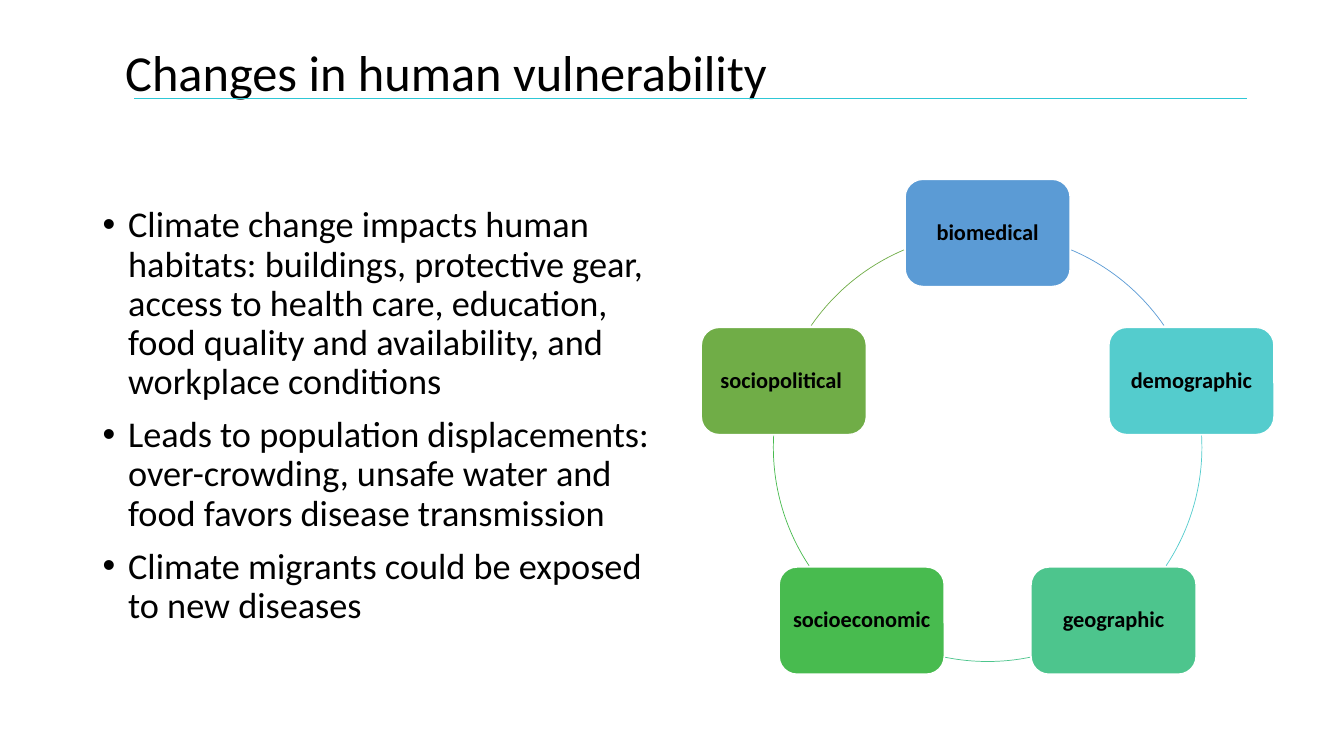
from math import cos, radians, sin

from lxml.etree import SubElement
from pptx import Presentation
from pptx.dml.color import RGBColor
from pptx.enum.shapes import MSO_CONNECTOR, MSO_SHAPE
from pptx.enum.text import MSO_ANCHOR, PP_ALIGN
from pptx.oxml.ns import qn
from pptx.util import Cm, Pt

COLORS = {
    "text": "000000",
    "border": "FFFFFF",
    "rule": "2EC7D6",
    "biomedical": "5B9BD5",
    "demographic": "54CCCD",
    "geographic": "4DC58D",
    "socioeconomic": "48BB4F",
    "sociopolitical ": "70AD47",
}
BULLETS = [
    "Climate change impacts human habitats: buildings, protective gear, access to "
    "health care, education, food quality and availability, and workplace conditions",
    "Leads to population displacements: over-crowding, unsafe water and food favors "
    "disease transmission",
    "Climate migrants could be exposed to new diseases",
]
FACTORS = [
    ("biomedical", 293, 325.4),
    ("demographic", 356.9, 33.6),
    ("geographic", 78.6, 101.4),
    ("socioeconomic", 146.4, 183.1),
    ("sociopolitical ", 214.6, 247),
]
CENTER_X, CENTER_Y, RADIUS = 24.89, 11.27, 5.4
BOX_W, BOX_H = 4.16, 2.7


def rgb(name):
    return RGBColor.from_string(COLORS[name])


def add_run(p, text, size, bold=False):
    p.line_spacing = 0.9
    r = p.add_run()
    r.text = text
    r.font.name = "Calibri"
    r.font.size = Pt(size)
    r.font.bold = bold
    r.font.color.rgb = rgb("text")


prs = Presentation()
prs.slide_width, prs.slide_height = Cm(33.87), Cm(19.05)
s = prs.slides.add_slide(prs.slide_layouts[5])

title = s.shapes.title
title.left, title.top, title.width, title.height = Cm(2.9), Cm(0.05), Cm(29.2), Cm(3.68)
title.text_frame.vertical_anchor = MSO_ANCHOR.MIDDLE
p = title.text_frame.paragraphs[0]
p.alignment = PP_ALIGN.LEFT
add_run(p, "Changes in human vulnerability", 36)

rule = s.shapes.add_connector(MSO_CONNECTOR.STRAIGHT, Cm(3.38), Cm(2.49), Cm(31.42), Cm(2.49))
rule.line.color.rgb = rgb("rule")
rule.line.width = Pt(0.5)
SubElement(rule._element.spPr, qn("a:effectLst"))

body = s.shapes.add_textbox(Cm(2.34), Cm(5.08), Cm(14.4), Cm(12.09))
tf = body.text_frame
tf.word_wrap = True
for i, text in enumerate(BULLETS):
    p = tf.paragraphs[0] if i == 0 else tf.add_paragraph()
    pPr = p._p.get_or_add_pPr()
    pPr.set("marL", str(Cm(0.64)))
    pPr.set("indent", str(Cm(-0.64)))
    SubElement(pPr, qn("a:buFont")).set("typeface", "Arial")
    SubElement(pPr, qn("a:buChar")).set("char", "•")
    p.space_before = Pt(10 if i else 0)
    add_run(p, text, 25.9)

for i, (factor, start, end) in enumerate(FACTORS):
    angle = radians(72 * i - 90)
    x = CENTER_X + RADIUS * cos(angle) - BOX_W / 2
    y = CENTER_Y + RADIUS * sin(angle) - BOX_H / 2
    sp = s.shapes.add_shape(MSO_SHAPE.ROUNDED_RECTANGLE, Cm(x), Cm(y), Cm(BOX_W), Cm(BOX_H))
    sp.shadow.inherit = False
    sp.fill.solid()
    sp.fill.fore_color.rgb = rgb(factor)
    sp.line.color.rgb = rgb("border")
    sp.line.width = Pt(1)
    tf = sp.text_frame
    tf.word_wrap = True
    tf.vertical_anchor = MSO_ANCHOR.MIDDLE
    tf.margin_left = tf.margin_right = Cm(0.1)
    p = tf.paragraphs[0]
    p.alignment = PP_ALIGN.CENTER
    add_run(p, factor, 16, bold=True)

    arc = s.shapes.add_shape(MSO_SHAPE.ARC, Cm(CENTER_X - RADIUS), Cm(CENTER_Y - RADIUS),
                             Cm(2 * RADIUS), Cm(2 * RADIUS))
    arc.shadow.inherit = False
    arc.adjustments[0] = start * 0.6
    arc.adjustments[1] = end * 0.6
    arc.fill.background()
    arc.line.color.rgb = rgb(factor)
    arc.line.width = Pt(0.5)

prs.save("out.pptx")
